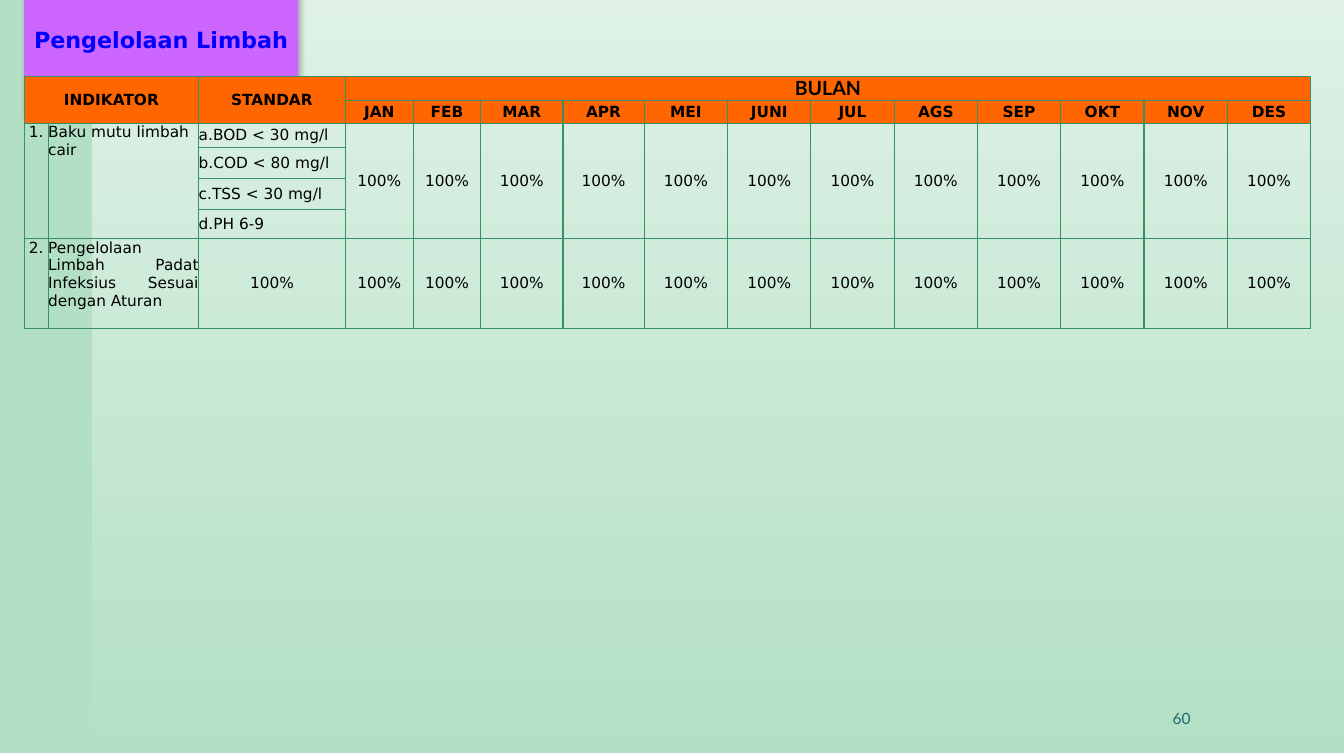
from lxml.etree import SubElement
from pptx import Presentation
from pptx.dml.color import RGBColor
from pptx.enum.shapes import MSO_SHAPE
from pptx.enum.text import MSO_ANCHOR, MSO_AUTO_SIZE, PP_ALIGN
from pptx.oxml import parse_xml
from pptx.oxml.ns import nsdecls, qn
from pptx.util import Inches, Pt

MINT = RGBColor(0xB3, 0xE0, 0xC5)
WHITE = RGBColor(0xFF, 0xFF, 0xFF)
BLACK = RGBColor(0, 0, 0)
BLUE = RGBColor(0, 0, 0xFF)
PURPLE = RGBColor(0xCC, 0x66, 0xFF)
ORANGE = RGBColor(0xFF, 0x66, 0)
GREEN = RGBColor(0x38, 0x90, 0x66)
TEAL = RGBColor(0x1F, 0x69, 0x6F)
BODY_FONT, ACCENT_FONT = "DejaVu Sans", "Lato"

MONTHS = ["JAN", "FEB", "MAR", "APR", "MEI", "JUNI",
          "JUL", "AGS", "SEP", "OKT", "NOV", "DES"]
LIMITS = ["a.BOD < 30 mg/l", "b.COD < 80 mg/l", "c.TSS < 30 mg/l", "d.PH 6-9"]
RESULTS = ["100%"] * len(MONTHS)
COL_WIDTHS = [0.24, 1.5, 1.46, 0.68, 0.67, 0.82, 0.81] + [0.83] * 8
ROW_HEIGHTS = [0.24, 0.23, 0.24, 0.31, 0.31, 0.29, 0.89]
FIRST_MONTH = 3


def style_text(p, size, color, bold=False, font=BODY_FONT, align=PP_ALIGN.CENTER):
    p.alignment = align
    for r in p.runs:
        r.font.name, r.font.size = font, Pt(size)
        r.font.color.rgb, r.font.bold = color, bold


def add_fading_panel(slide, left, top, width, height):
    """Place a white veil, fading downwards, behind everything else."""
    panel = slide.shapes.add_shape(MSO_SHAPE.RECTANGLE, left, top, width, height)
    panel.shadow.inherit = False
    panel.line.fill.background()
    panel.fill.gradient()
    panel.fill.gradient_angle = 270
    for stop, alpha in zip(panel.fill.gradient_stops, (60000, 0)):
        stop.color.rgb = WHITE
    for clr, alpha in zip(panel._element.spPr.iter(qn("a:srgbClr")), (60000, 0)):
        SubElement(clr, qn("a:alpha"), val=str(alpha))
    slide.shapes._spTree.insert(2, panel._element)


def add_title(slide, left, top, width, height):
    title = slide.shapes.title
    title.left, title.top, title.width, title.height = left, top, width, height
    title.fill.solid()
    title.fill.fore_color.rgb = PURPLE
    title._element.spPr.append(parse_xml(
        f'<a:effectLst {nsdecls("a")}><a:outerShdw blurRad="{Pt(4.5)}" '
        f'dist="{Pt(2.6)}" dir="{53 * 60000}" algn="tl" rotWithShape="0">'
        '<a:srgbClr val="000000"><a:alpha val="30000"/></a:srgbClr>'
        '</a:outerShdw></a:effectLst>'))
    tf = title.text_frame
    tf.text = "Pengelolaan Limbah"
    tf.word_wrap = False
    tf.auto_size = MSO_AUTO_SIZE.SHAPE_TO_FIT_TEXT
    tf.vertical_anchor = MSO_ANCHOR.MIDDLE
    tf.margin_left = tf.margin_right = Inches(0.09)
    tf.margin_top = tf.margin_bottom = Inches(0.04)
    style_text(tf.paragraphs[0], 16, BLUE, bold=True)


def set_borders(cell):
    tcPr = cell._tc.get_or_add_tcPr()
    for i, side in enumerate(("lnL", "lnR", "lnT", "lnB")):
        tcPr.insert(i, parse_xml(
            f'<a:{side} {nsdecls("a")} w="{Pt(1)}"><a:solidFill>'
            f'<a:srgbClr val="{GREEN}"/></a:solidFill></a:{side}>'))


def format_cell(cell, row, col):
    header = row < 2
    if header:
        cell.fill.solid()
        cell.fill.fore_color.rgb = ORANGE
    else:
        cell.fill.background()
    set_borders(cell)
    cell.margin_left = cell.margin_right = cell.margin_top = cell.margin_bottom = 0
    top_aligned = not header and col < 2
    cell.vertical_anchor = MSO_ANCHOR.TOP if top_aligned else MSO_ANCHOR.MIDDLE
    align = PP_ALIGN.CENTER
    if (row, col) == (2, 1):
        align = PP_ALIGN.LEFT
    elif (row, col) == (6, 1) or (2 <= row < 6 and col == 2):
        align = PP_ALIGN.JUSTIFY
    over_months = (row, col) == (0, FIRST_MONTH)
    style_text(cell.text_frame.paragraphs[0], 14 if over_months else 11, BLACK,
               header, ACCENT_FONT if over_months else BODY_FONT, align)


def add_indicator_table(slide, left, top, width, height):
    table = slide.shapes.add_table(len(ROW_HEIGHTS), len(COL_WIDTHS),
                                   left, top, width, height).table
    table.first_row = table.horz_banding = False
    for column, w in zip(table.columns, COL_WIDTHS):
        column.width = Inches(w)
    for row, h in zip(table.rows, ROW_HEIGHTS):
        row.height = Inches(h)

    last = len(COL_WIDTHS) - 1
    table.cell(0, 0).merge(table.cell(1, 1))
    table.cell(0, 2).merge(table.cell(1, 2))
    table.cell(0, FIRST_MONTH).merge(table.cell(0, last))
    for col in (0, 1, *range(FIRST_MONTH, last + 1)):
        table.cell(2, col).merge(table.cell(5, col))

    rows = [
        ["INDIKATOR", "", "STANDAR", "BULAN"],
        ["", "", ""] + MONTHS,
        ["1.", "Baku mutu limbah cair", LIMITS[0]] + RESULTS,
        *(["", "", limit] for limit in LIMITS[1:]),
        ["2.", "Pengelolaan Limbah Padat Infeksius Sesuai dengan Aturan", "100%"] + RESULTS,
    ]
    for i, texts in enumerate(rows):
        for j, text in enumerate(texts):
            if text:
                table.cell(i, j).text = text
        for j in range(last + 1):
            format_cell(table.cell(i, j), i, j)


def add_page_number(slide, left, top, width, height):
    tf = slide.shapes.add_textbox(left, top, width, height).text_frame
    tf.word_wrap = True
    tf.vertical_anchor = MSO_ANCHOR.MIDDLE
    tf.text = "60"
    style_text(tf.paragraphs[0], 11.1, TEAL, font=ACCENT_FONT, align=PP_ALIGN.RIGHT)


def main():
    prs = Presentation()
    prs.slide_width, prs.slide_height = Inches(13.39), Inches(7.5)
    slide = prs.slides.add_slide(prs.slide_layouts[5])
    slide.background.fill.solid()
    slide.background.fill.fore_color.rgb = MINT
    add_fading_panel(slide, Inches(0.92), 0, Inches(12.47), prs.slide_height)
    add_title(slide, Inches(0.24), Inches(0.21), Inches(2.73), Inches(0.36))
    add_indicator_table(slide, Inches(0.24), Inches(0.76), Inches(12.84), Inches(2.52))
    add_page_number(slide, Inches(8.84), Inches(6.95), Inches(3.12), Inches(0.4))
    prs.save("out.pptx")


if __name__ == "__main__":
    main()
